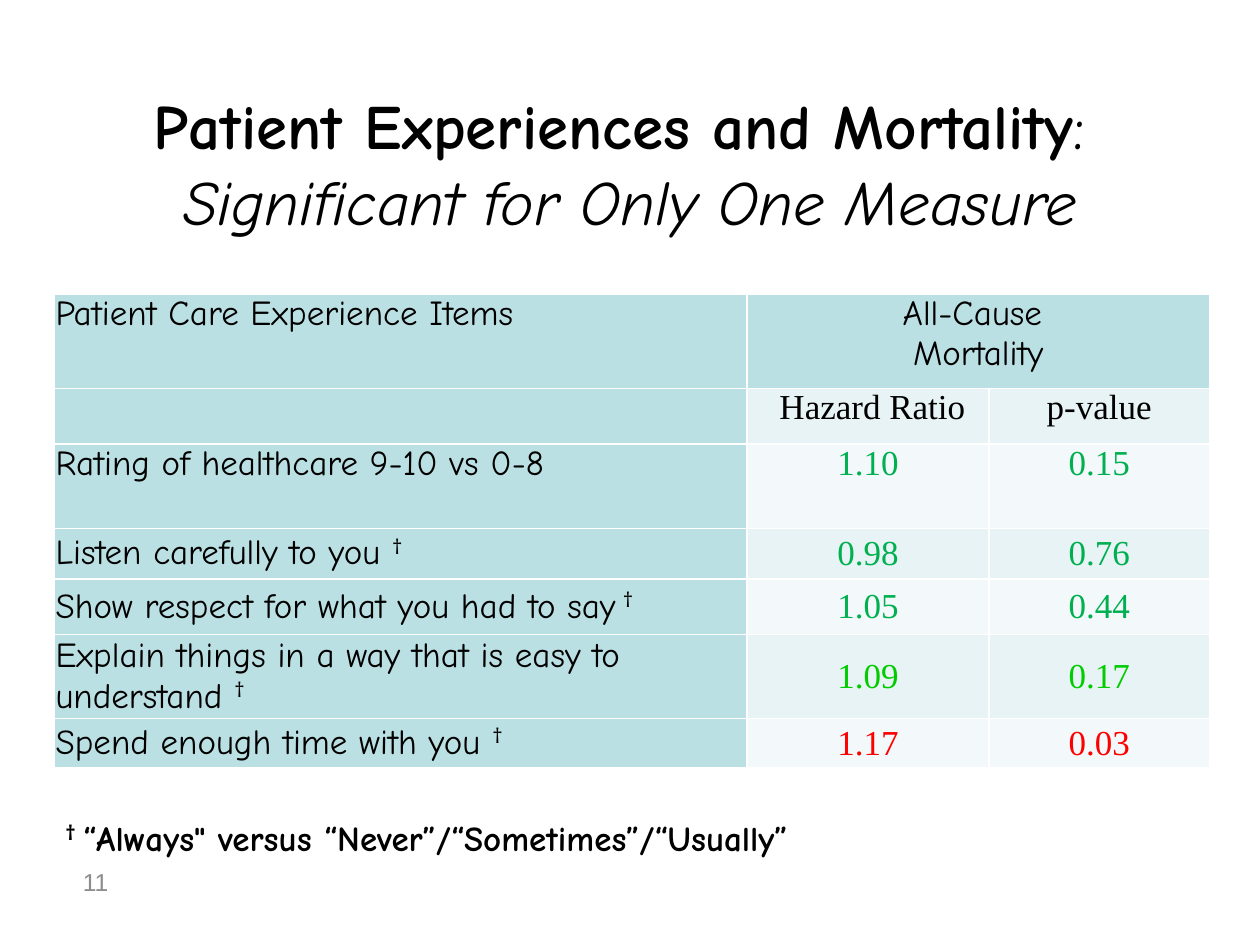
import pptx
import pptx.util
import pptx.dml.color
import pptx.enum.text
import pptx.oxml.ns
from lxml import etree

Cm, Pt = pptx.util.Cm, pptx.util.Pt
RGBColor = pptx.dml.color.RGBColor
ALIGN, ANCHOR = pptx.enum.text.PP_ALIGN, pptx.enum.text.MSO_ANCHOR
qn = pptx.oxml.ns.qn

BLACK = RGBColor(0x00, 0x00, 0x00)
GRAY = RGBColor(0x8C, 0x8C, 0x8C)
WHITE = RGBColor(0xFF, 0xFF, 0xFF)
GREEN = RGBColor(0x00, 0xB0, 0x50)
BRIGHT_GREEN = RGBColor(0x00, 0xCC, 0x00)
RED = RGBColor(0xFF, 0x00, 0x00)
TEAL = RGBColor(0xBB, 0xE0, 0xE3)
BAND_DARK = RGBColor(0xE7, 0xF3, 0xF4)
BAND_LIGHT = RGBColor(0xF3, 0xF9, 0xFA)

ITEMS = [
    ("Rating of healthcare 9-10 vs 0-8", "", "1.10", "0.15", GREEN),
    ("Listen carefully to you ", "†", "0.98", "0.76", GREEN),
    ("Show respect for what you had to say", " †", "1.05", "0.44", GREEN),
    ("Explain things in a way that is easy to understand ", "†",
     "1.09", "0.17", BRIGHT_GREEN),
    ("Spend enough time with you ", "†", "1.17", "0.03", RED),
]


class Deck:
    base = {"name": "Comic Neue", "size": Pt(20), "bold": False}
    serif = {"name": "Times New Roman"}

    def __init__(self, s):
        self.s = s

    def add_runs(self, tf, paragraphs, align=ALIGN.LEFT):
        """Fill tf; each paragraph is a list of (text, format) runs."""
        for i, runs in enumerate(paragraphs):
            p = tf.paragraphs[0] if i == 0 else tf.add_paragraph()
            p.alignment = align
            for text, fmt in runs:
                if text == "\n":
                    p.add_line_break()
                    continue
                r = p.add_run()
                r.text = text
                values = {**self.base, "color": BLACK, **fmt}
                r.font.color.rgb = values.pop("color")
                if values.pop("raised", False):
                    r.font._element.set("baseline", "30000")
                for key, value in values.items():
                    setattr(r.font, key, value)

    def text(self, box, runs, align=ALIGN.LEFT, anchor=ANCHOR.TOP):
        tf = self.s.shapes.add_textbox(*map(Cm, box)).text_frame
        tf.word_wrap = True
        tf.vertical_anchor = anchor
        self.add_runs(tf, [runs], align)

    def table(self, box, widths, heights):
        shape = self.s.shapes.add_table(len(heights), len(widths), *map(Cm, box))
        table = shape.table
        table.first_row = table.horz_banding = False
        for column, width in zip(table.columns, widths):
            column.width = Cm(width)
        for row, height in zip(table.rows, heights):
            row.height = Cm(height)
        return table

    def cell(self, cell, paragraphs, fill, align=ALIGN.LEFT, anchor=ANCHOR.TOP):
        fmt = {"margin_left": Cm(0.03), "margin_right": Cm(0.03),
               "margin_top": 0, "margin_bottom": 0, "vertical_anchor": anchor}
        for key, value in fmt.items():
            setattr(cell, key, value)
        self.add_runs(cell.text_frame, paragraphs, align)
        tcPr = cell._tc.get_or_add_tcPr()
        for side in ("a:lnL", "a:lnR", "a:lnT", "a:lnB"):
            ln = etree.SubElement(tcPr, qn(side), w=str(Pt(1)))
            solid = etree.SubElement(ln, qn("a:solidFill"))
            etree.SubElement(solid, qn("a:srgbClr"), val=str(WHITE))
        cell.fill.solid()
        cell.fill.fore_color.rgb = fill


def main():
    prs = pptx.Presentation()
    prs.slide_width, prs.slide_height = Cm(25.4), Cm(19.05)
    deck = Deck(prs.slides.add_slide(prs.slide_layouts[6]))

    big = {"size": Pt(36)}
    deck.text((0, 1.9, 25.4, 2.75), [
        ("Patient Experiences and Mortality", {**big, "bold": True}),
        (": ", big),
        ("\n", {}),
        ("Significant for Only One Measure", {**big, "italic": True}),
    ], ALIGN.CENTER, ANCHOR.MIDDLE)

    table = deck.table((1.09, 5.93, 23.29, 9.45), (13.97, 4.88, 4.44),
                       (1.9, 1.12, 1.7, 1.02, 1.12, 1.6, 0.99))
    table.cell(0, 1).merge(table.cell(0, 2))
    deck.cell(table.cell(0, 0), [[("Patient Care Experience Items", {})]], TEAL)
    deck.cell(table.cell(0, 1), [[("All-Cause ", {})], [("Mortality", {})]],
              TEAL, ALIGN.CENTER)
    deck.cell(table.cell(1, 0), [], TEAL)
    for col, heading in enumerate((" Hazard Ratio", "p-value"), 1):
        deck.cell(table.cell(1, col), [[(heading, deck.serif)]],
                  BAND_DARK, ALIGN.CENTER)

    for row, (item, mark, ratio, p_value, color) in enumerate(ITEMS, 2):
        anchor = ANCHOR.MIDDLE if mark else ANCHOR.TOP
        runs = [(item, {})]
        if mark:
            runs.append((mark, {"raised": True}))
        deck.cell(table.cell(row, 0), [runs], TEAL, anchor=anchor)
        band = BAND_DARK if row % 2 else BAND_LIGHT
        for col, value in enumerate((ratio, p_value), 1):
            deck.cell(table.cell(row, col),
                      [[(value, {**deck.serif, "color": color})]],
                      band, ALIGN.CENTER, anchor)

    deck.text((1.07, 16.33, 22.86, 1.12), [
        ("† ", {"bold": True, "raised": True}),
        ("“Always\" versus “Never”/“Sometimes”/“Usually”", {"bold": True}),
    ])
    deck.text((1.42, 17.35, 6.65, 1.32),
              [("11", {"name": "Arial", "size": Pt(14), "color": GRAY})])
    prs.save("out.pptx")


if __name__ == "__main__":
    main()
